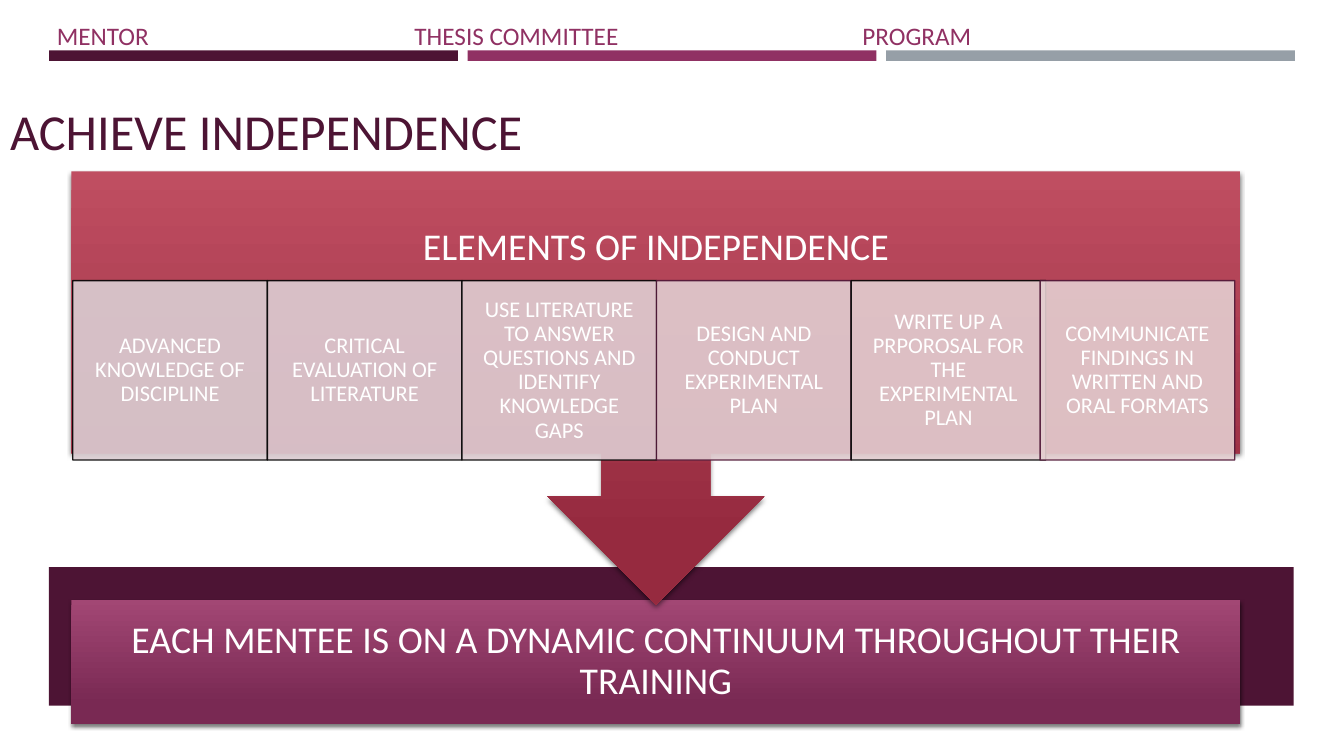
from lxml import etree
from pptx import Presentation
from pptx.dml.color import RGBColor
from pptx.enum.shapes import MSO_SHAPE
from pptx.enum.text import MSO_ANCHOR, PP_ALIGN
from pptx.oxml import parse_xml
from pptx.oxml.ns import nsdecls, qn
from pptx.util import Pt

RECT, CALLOUT = MSO_SHAPE.RECTANGLE, MSO_SHAPE.DOWN_ARROW_CALLOUT
LEFT, CENTER = PP_ALIGN.LEFT, PP_ALIGN.CENTER
MIDDLE = MSO_ANCHOR.MIDDLE
COLORS = {
    "plum": "4D1434", "magenta": "903163", "gray": "969FA7",
    "white": "FFFFFF", "black": "000000",
    "banner_top": "A24774", "banner_end": "792953",
    "callout_top": "BF4E61", "callout_end": "962A3F",
}


def add_box(kind, x, y, w, h, *fills):
    """Add a borderless shape; two fills make a vertical gradient with a soft shadow."""
    sp = s.shapes.add_shape(kind, Pt(x), Pt(y), Pt(w), Pt(h))
    sp.shadow.inherit = False
    sp.line.fill.background()
    if len(fills) == 1:
        sp.fill.solid()
        sp.fill.fore_color.rgb = RGBColor.from_string(fills[0])
        return sp
    sp.fill.gradient()
    sp.fill.gradient_angle = 270
    for stop, position, color in zip(sp.fill.gradient_stops, (0, 0.84), fills):
        stop.position = position
        stop.color.rgb = RGBColor.from_string(color)
    sp._element.spPr.find(qn("a:effectLst")).append(parse_xml(
        f'<a:outerShdw {nsdecls("a")} blurRad="{Pt(3)}" dist="{Pt(2)}" dir="5400000" '
        'rotWithShape="0"><a:srgbClr val="000000"><a:alpha val="55000"/></a:srgbClr>'
        '</a:outerShdw>'))
    return sp


def write(sp, text, size, color, align=CENTER, spacing=0.9, inset=(7.2, 3.6)):
    tf = sp.text_frame
    tf.word_wrap = True
    tf.vertical_anchor = MIDDLE
    tf.margin_left = tf.margin_right = Pt(inset[0])
    tf.margin_top = tf.margin_bottom = Pt(inset[1])
    p = tf.paragraphs[0]
    p.text = text
    p.alignment = align
    p.line_spacing = spacing
    p.font.size = Pt(size)
    p.font.name = "Calibri"
    p.font.color.rgb = RGBColor.from_string(COLORS[color])


prs = Presentation()
prs.slide_width, prs.slide_height = Pt(960), Pt(540)
s = prs.slides.add_slide(prs.slide_layouts[5])

# Title
title = s.shapes.title
title.left, title.top, title.width, title.height = Pt(0), Pt(34), Pt(868), Pt(118)
write(title, "ACHIEVE INDEPENDENCE", 36, "plum", LEFT, 1.0)

# Header bars with their labels
headers = [("MENTOR", "plum", 33.5), ("THESIS COMMITTEE", "magenta", 289),
           ("PROGRAM", "gray", 609)]
for i, (label, color, label_x) in enumerate(headers):
    add_box(RECT, 35 + i * 299, 36, 292, 7.5, COLORS[color])
    tb = s.shapes.add_textbox(Pt(label_x), Pt(11), Pt(200), Pt(29))
    write(tb, label, 18, "magenta", LEFT, 1.0)

# Conclusion banner over the footer band
add_box(RECT, 35, 405, 889, 99, COLORS["plum"])
banner = add_box(RECT, 51, 428.5, 835, 88.5, COLORS["banner_top"], COLORS["banner_end"])
write(banner, "EACH MENTEE IS ON A DYNAMIC CONTINUUM THROUGHOUT THEIR TRAINING",
      27, "white", inset=(15, 15))

# Callout pointing down at the banner
callout = add_box(CALLOUT, 51, 122.5, 835, 309.5, COLORS["callout_top"], COLORS["callout_end"])
write(callout, "ELEMENTS OF INDEPENDENCE", 27, "white", inset=(15, 15))
callout.text_frame.margin_bottom = Pt(107)

# Six elements
elements = [
    ("ADVANCED KNOWLEDGE OF DISCIPLINE", "DBCED3", "black", 52),
    ("CRITICAL EVALUATION OF LITERATURE", "DDCDD3", "black", 191),
    ("USE LITERATURE TO ANSWER QUESTIONS AND IDENTIFY KNOWLEDGE GAPS", "DFCDD2", "black", 330),
    ("DESIGN AND CONDUCT EXPERIMENTAL PLAN", "E1CDD1", "plum", 469),
    ("WRITE UP A PRPOROSAL FOR THE EXPERIMENTAL PLAN", "E3CED1", "black", 608),
    ("COMMUNICATE FINDINGS IN WRITTEN AND ORAL FORMATS", "E4CED0", "plum", 743),
]
for text, fill, border, x in elements:
    cell = add_box(RECT, x, 200.4, 139, 128.2, fill)
    cell.line.color.rgb = RGBColor.from_string(COLORS[border])
    cell.line.width = Pt(1)
    for color in cell._element.spPr.iter(qn("a:srgbClr")):
        etree.SubElement(color, qn("a:alpha")).set("val", "90000")
    write(cell, text, 16, "white", inset=(9, 1.5))

prs.save("out.pptx")
